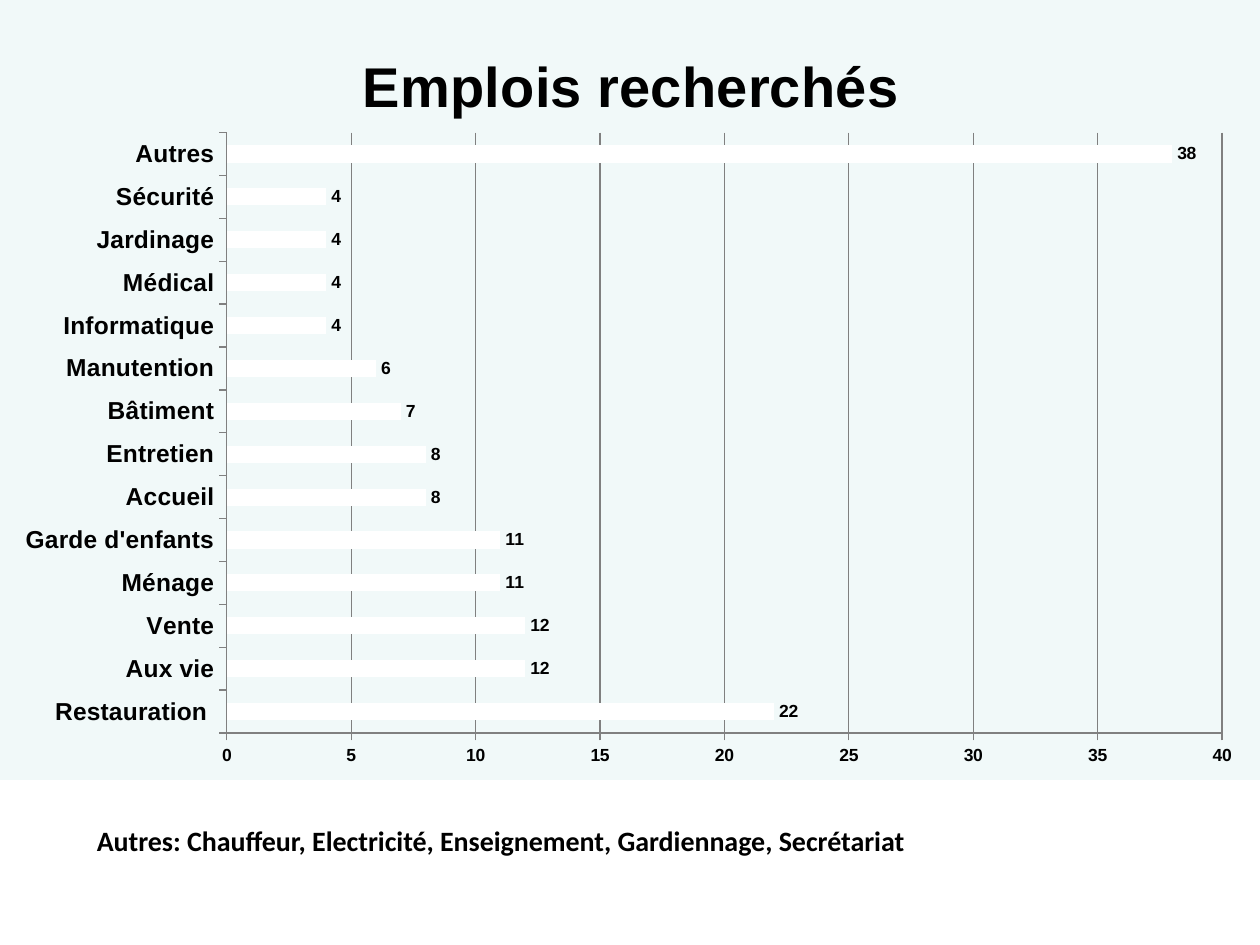
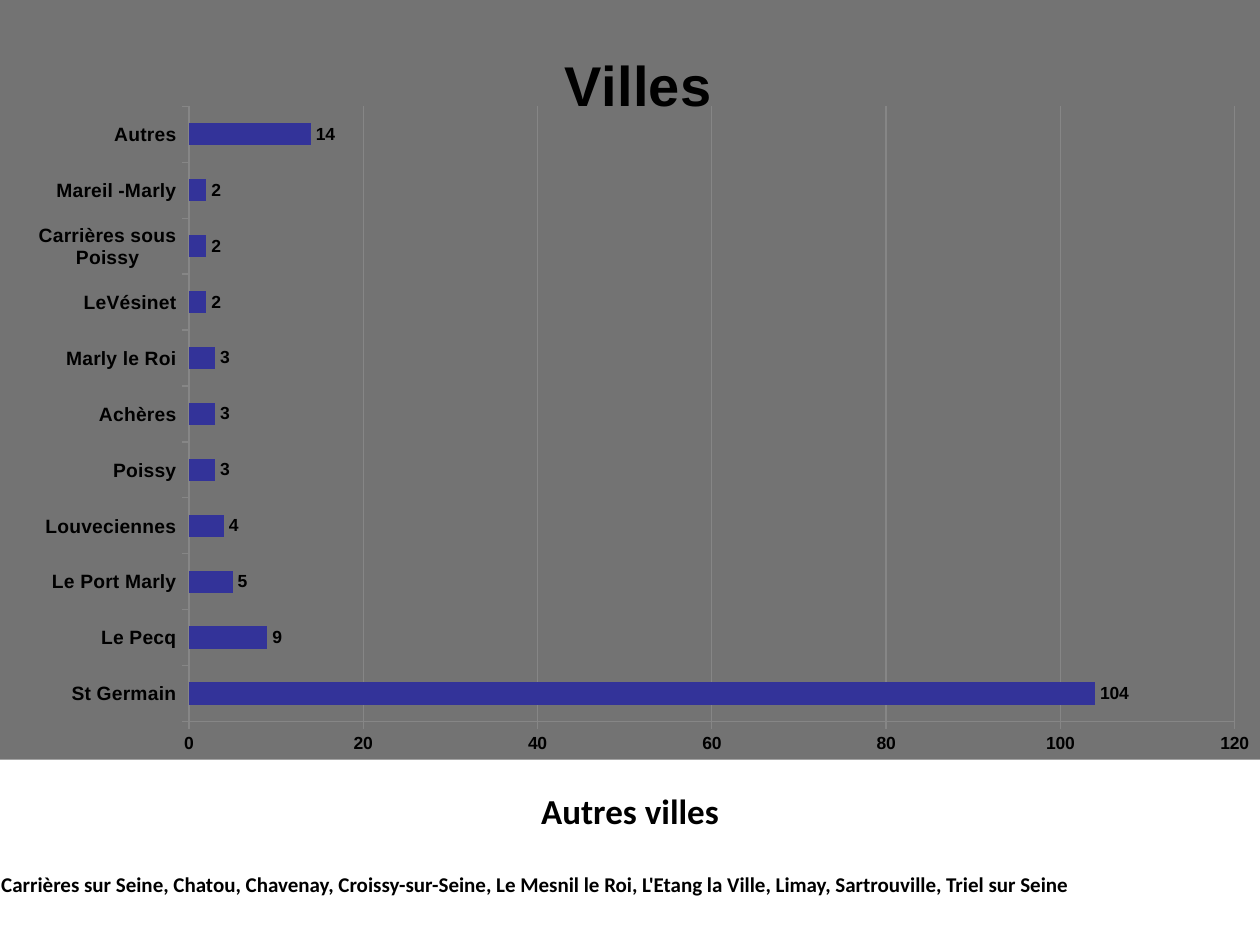
"""Build two slides of bar charts on job searches and home towns."""
from dataclasses import dataclass

from lxml.etree import SubElement
from pptx import Presentation
from pptx.chart.data import CategoryChartData as Data
from pptx.dml.color import RGBColor
from pptx.enum.chart import XL_CHART_TYPE as Kind, XL_LABEL_POSITION as Spot
from pptx.enum.text import MSO_ANCHOR as Anchor, PP_ALIGN as Align
from pptx.oxml import parse_xml
from pptx.oxml.ns import nsdecls, qn
from pptx.util import Inches, Pt

HUES = {"ink": "000000", "mint": "F1F9F9", "gray": "737373",
        "white": "FFFFFF", "blue": "333399", "dark": "808080", "soft": "868686"}


@dataclass
class Bars:
    title: str
    spot: tuple[float, float]
    plot: tuple[float, float, float, float]
    tall: float
    back: str
    bar: str
    rule: str
    size: int
    top: int
    step: int
    rows: dict[str, int]


JOBS = Bars("Emplois recherchés", (0.28, 0.05), (0.18, 0.17, 0.79, 0.77), 6.19,
            "mint", "white", "dark", 14, 40, 5,
            {"Restauration ": 22, "Aux vie": 12, "Vente": 12, "Ménage": 11,
             "Garde d'enfants": 11, "Accueil": 8, "Entretien": 8, "Bâtiment": 7,
             "Manutention": 6, "Informatique": 4, "Médical": 4, "Jardinage": 4,
             "Sécurité": 4, "Autres": 38})
TOWNS = Bars("Villes", (0.44, 0.05), (0.15, 0.14, 0.83, 0.81), 6.03,
             "gray", "blue", "soft", 11, 120, 20,
             {"St Germain": 104, "Le Pecq": 9, "Le Port Marly": 5,
              "Louveciennes": 4, "Poissy": 3, "Achères": 3, "Marly le Roi": 3,
              "LeVésinet": 2, "Carrières sous Poissy": 2, "Mareil -Marly": 2,
              "Autres": 14})
JOB_NOTE = "Autres: Chauffeur, Electricité, Enseignement, Gardiennage, Secrétariat"
TOWN_NOTE = ("Carrières sur Seine, Chatou, Chavenay, Croissy-sur-Seine, Le Mesnil le Roi, "
             "L'Etang la Ville, Limay, Sartrouville, Triel sur Seine")


def hue(name: str) -> RGBColor:
    return RGBColor.from_string(HUES[name])


def style(font, size: int, bold: bool = True, face: str = "Arial") -> None:
    font.name, font.size, font.bold = face, Pt(size), bold
    font.color.rgb = hue("ink")


def place(host, index: int, box: tuple, inner: bool = False) -> None:
    old = host.find(qn("c:layout"))
    if old is not None:
        host.remove(old)
    layout = parse_xml(f"<c:layout {nsdecls('c')}/>")
    manual = SubElement(layout, qn("c:manualLayout"))
    marks = [("layoutTarget", "inner")] if inner else []
    marks += [("xMode", "edge"), ("yMode", "edge"), *zip("xywh", box)]
    for tag, val in marks:
        SubElement(manual, qn(f"c:{tag}")).set("val", str(val))
    host.insert(index, layout)


def paint(chart, name: str) -> None:
    chart.element.find(qn("c:chart")).addnext(parse_xml(
        f'<c:spPr {nsdecls("c", "a")}><a:solidFill><a:srgbClr val="{HUES[name]}"/>'
        "</a:solidFill><a:ln><a:noFill/></a:ln></c:spPr>"))


def add_bars(slide, bars: Bars) -> None:
    data = Data()
    data.categories = list(bars.rows)
    data.add_series("Series 1", list(bars.rows.values()))
    chart = slide.shapes.add_chart(Kind.BAR_CLUSTERED, 0, 0, Inches(10),
                                   Inches(bars.tall), data).chart
    style(chart.font, 10)
    paint(chart, bars.back)
    chart.has_legend = False
    chart.has_title = True
    title = chart.chart_title
    title.text_frame.text = bars.title
    style(title.text_frame.paragraphs[0].font, 32)
    place(title.element, 1, bars.spot)
    place(chart.element.find(f".//{qn('c:plotArea')}"), 0, bars.plot, True)

    cats, vals = chart.category_axis, chart.value_axis
    vals.minimum_scale, vals.maximum_scale, vals.major_unit = 0, bars.top, bars.step
    vals.has_major_gridlines = True
    style(cats.tick_labels.font, bars.size)
    style(vals.tick_labels.font, 10)
    for line in (cats.format.line, vals.format.line, vals.major_gridlines.format.line):
        line.color.rgb, line.width = hue(bars.rule), Pt(0.75)

    plot = chart.plots[0]
    plot.gap_width, plot.vary_by_categories = 150, False
    fill = plot.series[0].format.fill
    fill.solid()
    fill.fore_color.rgb = hue(bars.bar)
    plot.has_data_labels = True
    labels = plot.data_labels
    labels.show_value, labels.position = True, Spot.OUTSIDE_END
    style(labels.font, 10)


def add_note(slide) -> None:
    box = slide.shapes.add_textbox(Inches(0.67), Inches(6.43), Inches(8.5), Inches(0.44))
    box.text_frame.word_wrap = True
    para = box.text_frame.paragraphs[0]
    for text, *look in ((JOB_NOTE, 16, True, "Calibri"), (" ", 20, False, "Arial")):
        run = para.add_run()
        run.text = text
        style(run.font, *look)


def add_list(slide) -> None:
    table = slide.shapes.add_table(2, 1, 0, Inches(6.11), Inches(10), Inches(1.02)).table
    table.first_row = table.horz_banding = False
    rows = (("Autres villes", 0.66, 20, Align.CENTER, Anchor.MIDDLE),
            (TOWN_NOTE, 0.36, 12, Align.LEFT, Anchor.BOTTOM))
    for row, (text, tall, size, align, anchor) in zip(table.rows, rows):
        row.height = Inches(tall)
        cell = row.cells[0]
        cell.fill.background()
        cell.text, cell.vertical_anchor = text, anchor
        cell.margin_left = cell.margin_right = cell.margin_top = Inches(0.01)
        cell.margin_bottom = 0
        para = cell.text_frame.paragraphs[0]
        para.alignment = align
        style(para.font, size, face="Calibri")


def main() -> None:
    deck = Presentation()
    deck.slide_width, deck.slide_height = Inches(10), Inches(7.5)
    for bars, add_foot in ((JOBS, add_note), (TOWNS, add_list)):
        slide = deck.slides.add_slide(deck.slide_layouts[6])
        add_bars(slide, bars)
        add_foot(slide)
    deck.save("out.pptx")


if __name__ == "__main__":
    main()
